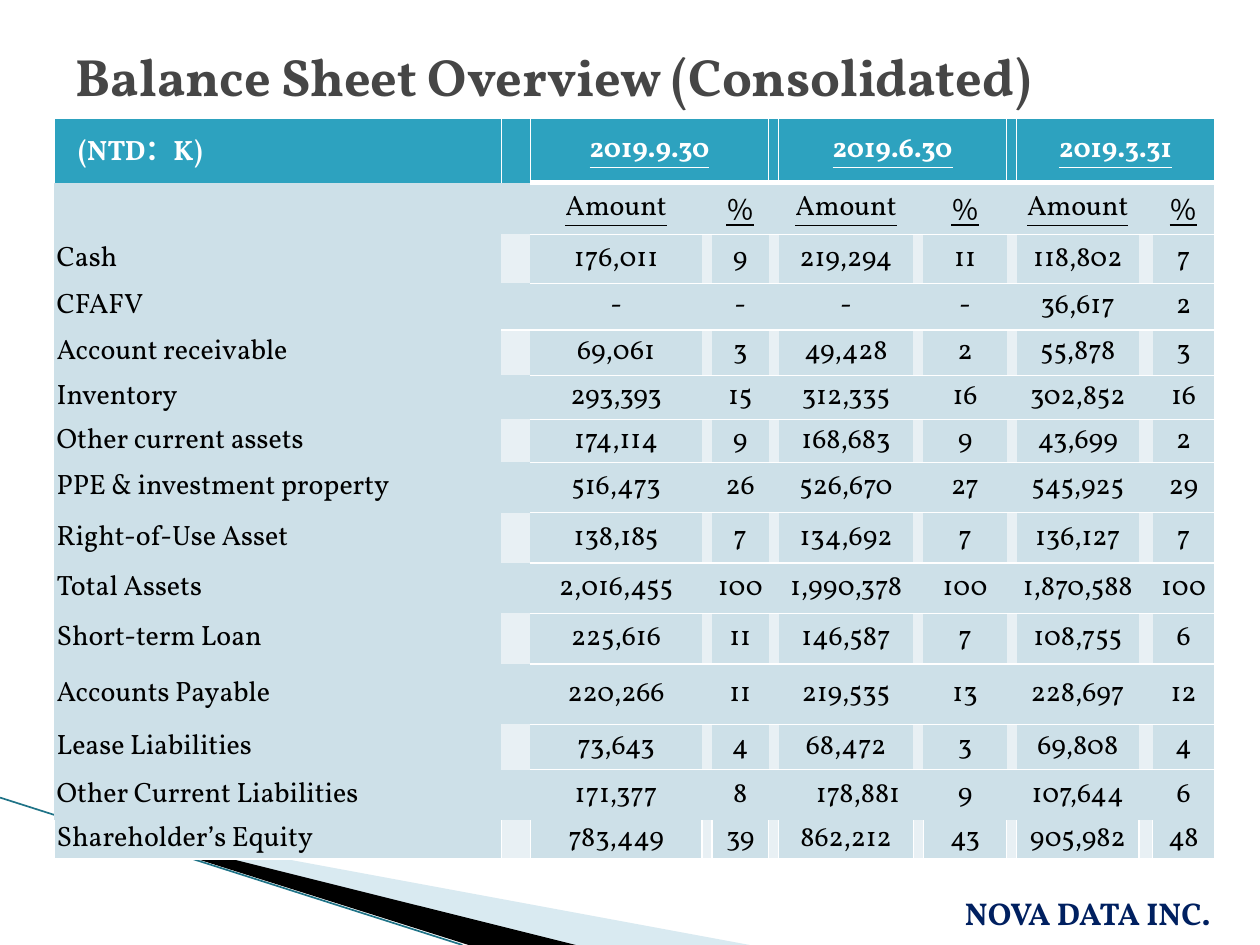
from lxml.etree import SubElement
from pptx import Presentation
from pptx.dml.color import RGBColor
from pptx.enum.shapes import MSO_CONNECTOR
from pptx.enum.text import MSO_ANCHOR, MSO_AUTO_SIZE, PP_ALIGN
from pptx.oxml.ns import qn
from pptx.util import Inches, Pt

FONT = "Vollkorn"
WHITE = RGBColor(0xFF, 0xFF, 0xFF)
BLACK = RGBColor(0x00, 0x00, 0x00)
HEADER = RGBColor(0x2D, 0xA2, 0xBF)
BAND = RGBColor(0xCD, 0xE0, 0xE8)
PALE_BAND = RGBColor(0xE8, 0xF0, 0xF4)
TITLE_GREY = RGBColor(0x46, 0x46, 0x46)
NAVY = RGBColor(0x00, 0x20, 0x60)
SWOOSH_BLUE = RGBColor(0xA0, 0xCB, 0xDC)
SWOOSH_LINE = RGBColor(0x1F, 0x73, 0x87)

# Content
TITLE = "Balance Sheet Overview (Consolidated)"
COMPANY = "NOVA DATA INC."
UNIT = "(NTD：K)"
DATES = ["2019.9.30", "2019.6.30", "2019.3.31"]
ROWS = [
    ("", *["Amount", "％"] * len(DATES)),
    ("Cash", "176,011", "9", "219,294", "11", "118,802", "7"),
    ("CFAFV", "-", "-", "-", "-", "36,617", "2"),
    ("Account receivable", "69,061", "3", "49,428", "2", "55,878", "3"),
    ("Inventory", "293,393", "15", "312,335", "16", "302,852", "16"),
    ("Other current assets", "174,114", "9", "168,683", "9", "43,699", "2"),
    ("PPE & investment property", "516,473", "26", "526,670", "27", "545,925", "29"),
    ("Right-of-Use Asset", "138,185", "7", "134,692", "7", "136,127", "7"),
    ("Total Assets", "2,016,455", "100", "1,990,378", "100", "1,870,588", "100"),
    ("Short-term Loan", "225,616", "11", "146,587", "7", "108,755", "6"),
    ("Accounts Payable", "220,266", "11", "219,535", "13", "228,697", "12"),
    ("Lease Liabilities", "73,643", "4", "68,472", "3", "69,808", "4"),
    ("Other Current Liabilities", "171,377", "8", "178,881", "9", "107,644", "6"),
    ("Shareholder’s Equity", "783,449", "39", "862,212", "43", "905,982", "48"),
]
COL_WIDTHS = [3.55, 0.23, 1.36, 0.08, 0.45, 0.08, 1.07, 0.08, 0.66, 0.08, 0.97, 0.11, 0.49]
ROW_HEIGHTS = [0.51, 0.41, 0.39, 0.37, 0.36, 0.35, 0.34, 0.4, 0.4, 0.4, 0.4, 0.48, 0.36, 0.4, 0.31]
# Border widths by (row, column) where the label columns differ from the rule
LABEL_BORDERS = {(3, 1): {"R": 1, "B": 1}, (4, 1): {"T": 1}}
INDENTED = (13, 6)

SWOOSHES = [
    ([(0.55, 6.5), (5.95, 7.5), (4.56, 7.5)], SWOOSH_BLUE, 40),
    ([(0.53, 6.49), (4.57, 7.5), (3.72, 7.5)], BLACK, 100),
]


def style(paragraph, size, color, bold=False, underline=False):
    font = paragraph.font
    font.name, font.size, font.bold = FONT, Pt(size), bold
    font.color.rgb = color
    for run in paragraph.runs:
        run.font.name, run.font.size, run.font.bold = FONT, Pt(size), bold
        run.font.underline = underline
        run.font.color.rgb = color


def cell_borders(row, col):
    if row == 0:
        return {"L": 1, "R": 1, "T": 1, **({"B": 3} if col > 1 else {})}
    if row == len(ROWS):
        return {"L": 1, "R": 1, "B": 1}
    if col < 2:
        return LABEL_BORDERS.get((row, col), {})
    return {"R": 1, "T": 1, "B": 1}


def set_borders(cell, widths):
    properties = cell._tc.get_or_add_tcPr()
    for side in "LRTB":
        line = SubElement(properties, qn(f"a:ln{side}"))
        if side in widths:
            line.set("w", str(Pt(widths[side])))
            fill = SubElement(line, qn("a:solidFill"))
            SubElement(fill, qn("a:srgbClr")).set("val", str(WHITE))
        else:
            SubElement(line, qn("a:noFill"))


def cell_text(row, col):
    if row == 0:
        if col == 0:
            return UNIT
        return DATES[(col - 2) // 4] if col % 4 == 2 else ""
    return "" if col % 2 else ROWS[row - 1][col // 2]


prs = Presentation()
prs.slide_width, prs.slide_height = Inches(10), Inches(7.5)
slide = prs.slides.add_slide(prs.slide_layouts[5])
shapes = slide.shapes

# Corner swooshes
for points, color, opacity in SWOOSHES:
    corners = [(Inches(x), Inches(y)) for x, y in points]
    builder = shapes.build_freeform(*corners[0])
    builder.add_line_segments(corners[1:], close=True)
    swoosh = builder.convert_to_shape()
    swoosh.shadow.inherit = False
    swoosh.fill.solid()
    swoosh.fill.fore_color.rgb = color
    swoosh.line.fill.background()
    if opacity < 100:
        tint = swoosh._element.spPr.find(".//" + qn("a:srgbClr"))
        SubElement(tint, qn("a:alpha")).set("val", str(opacity * 1000))

edge = shapes.add_connector(
    MSO_CONNECTOR.STRAIGHT, Inches(0), Inches(6.33), Inches(3.67), Inches(7.5))
edge.line.color.rgb = SWOOSH_LINE
edge.line.width = Pt(0.95)
SubElement(edge._element.spPr, qn("a:effectLst"))

# Balance sheet
sheet = shapes.add_table(
    len(ROW_HEIGHTS), len(COL_WIDTHS), Inches(0.43), Inches(0.94),
    Inches(sum(COL_WIDTHS)), Inches(sum(ROW_HEIGHTS))).table
sheet.horz_banding = False
for column, width in zip(sheet.columns, COL_WIDTHS):
    column.width = Inches(width)
for line, height in zip(sheet.rows, ROW_HEIGHTS):
    line.height = Inches(height)

for row in range(len(ROW_HEIGHTS)):
    for col in range(len(COL_WIDTHS)):
        cell = sheet.cell(row, col)
        cell.margin_left = cell.margin_right = Inches(0.02)
        cell.margin_top = cell.margin_bottom = 0
        cell.vertical_anchor = MSO_ANCHOR.MIDDLE
        set_borders(cell, cell_borders(row, col))
        is_gap = col % 2 == 1
        cell.fill.solid()
        cell.fill.fore_color.rgb = (
            HEADER if row == 0 else PALE_BAND if is_gap and row % 2 == 0 else BAND)
        entry = cell.text_frame.paragraphs[0]
        entry.text = cell_text(row, col)
        entry.alignment = PP_ALIGN.CENTER if col else PP_ALIGN.LEFT
        if (row, col) == (0, 0):
            entry._p.get_or_add_pPr().set("indent", str(Inches(0.17)))
        if (row, col) == INDENTED:
            entry._p.get_or_add_pPr().set("marL", str(Inches(0.19)))
        style(entry, 16, BLACK if row else WHITE, bold=row == 0,
              underline=row < 2 and col > 0)
        if not entry.runs:
            SubElement(entry._p, qn("a:endParaRPr")).set("sz", "1600")

for start in (2, 6, 10):
    sheet.cell(0, start).merge(sheet.cell(0, start + 2))

# Title
title = shapes.title
title.left, title.top, title.width, title.height = map(Inches, (0.5, 0.3, 9, 1.25))
title.text_frame.text = TITLE
title.text_frame.vertical_anchor = MSO_ANCHOR.TOP
title.text_frame.auto_size = MSO_AUTO_SIZE.NONE
heading = title.text_frame.paragraphs[0]
heading.alignment = PP_ALIGN.LEFT
style(heading, 30, TITLE_GREY, bold=True)

# Company name
company = shapes.add_textbox(Inches(7.56), Inches(7.05), Inches(2.37), Inches(0.4))
company.text_frame.text = COMPANY
company.text_frame.word_wrap = False
company.text_frame.auto_size = MSO_AUTO_SIZE.SHAPE_TO_FIT_TEXT
style(company.text_frame.paragraphs[0], 18, NAVY, bold=True)

prs.save("out.pptx")
